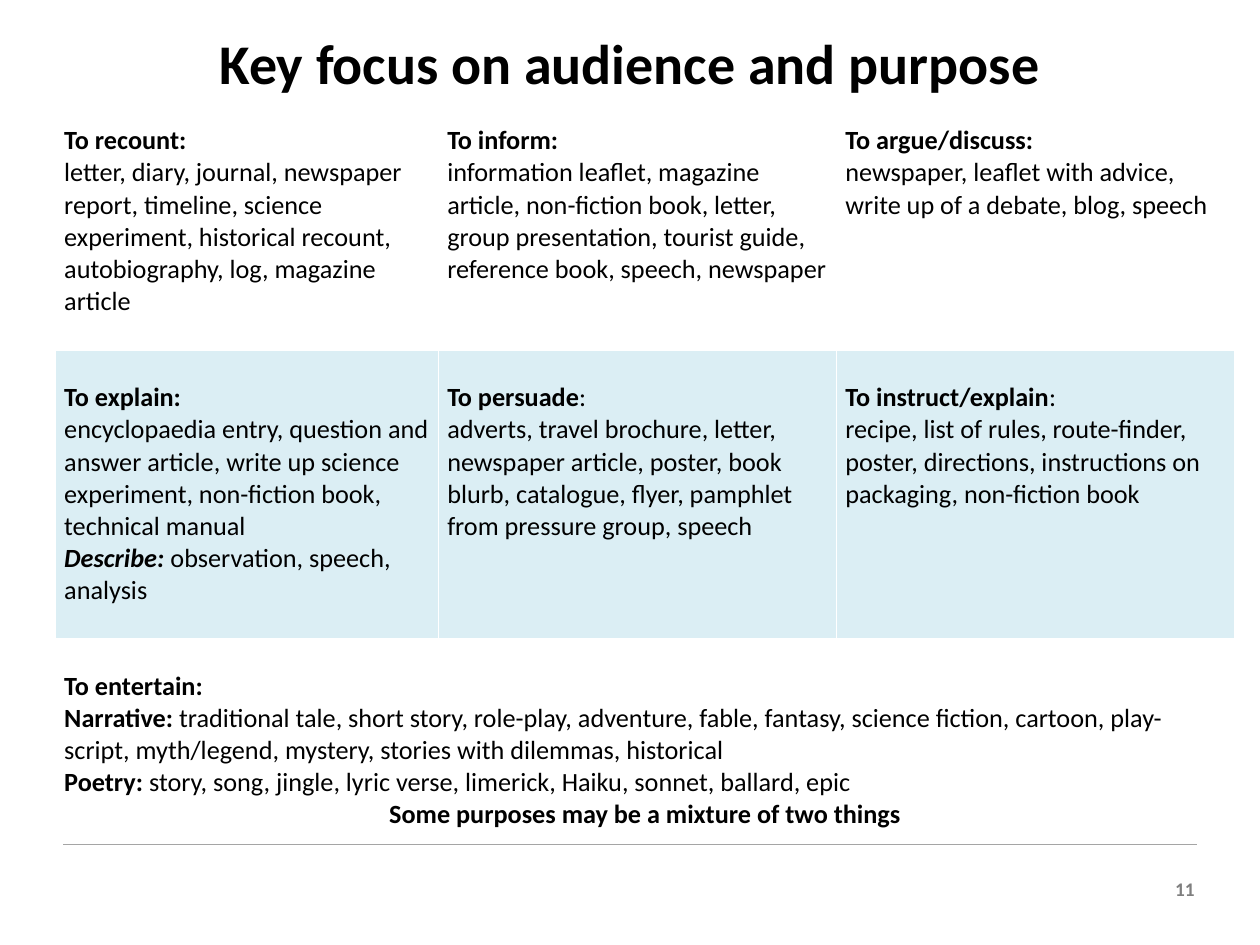
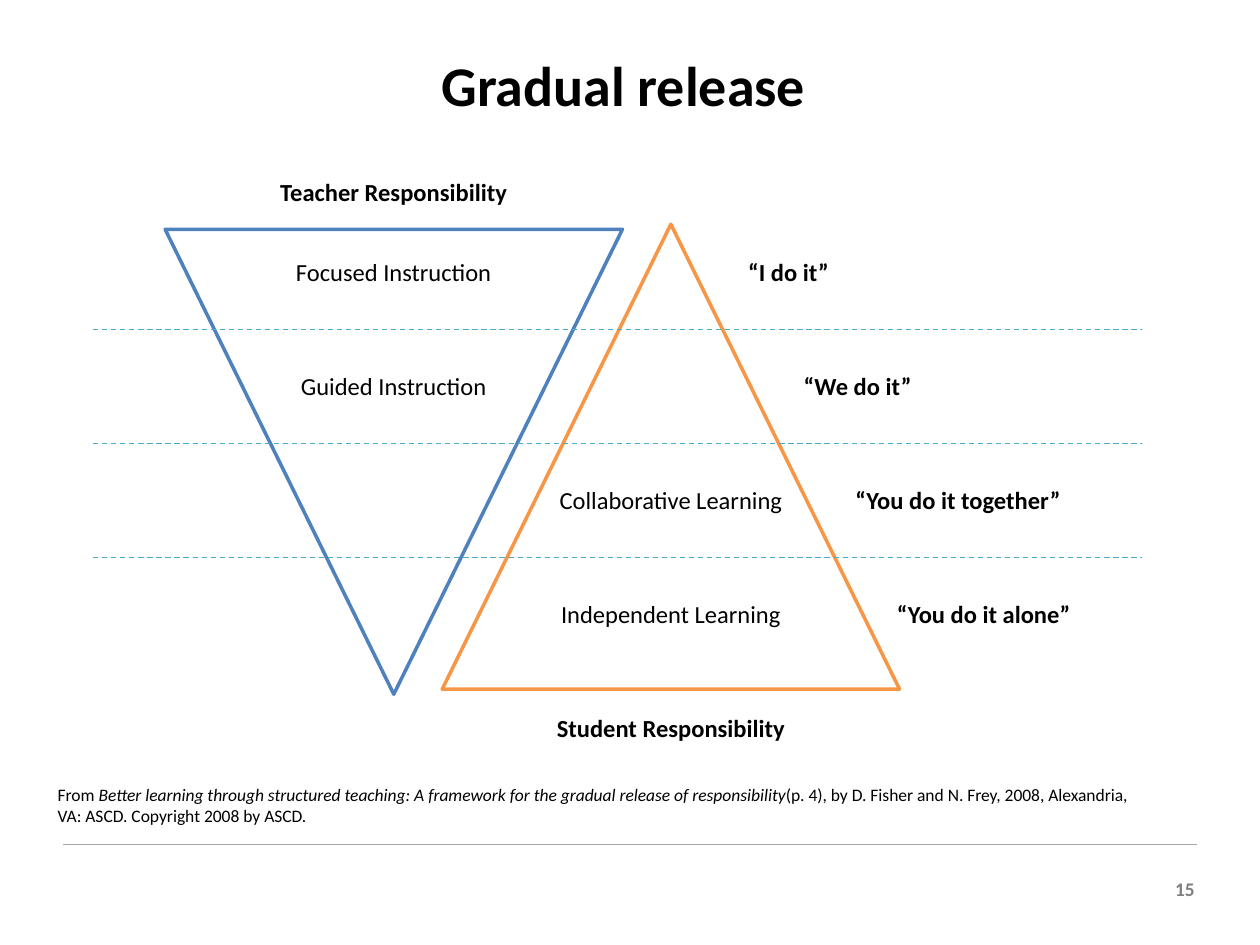
import pptx
import pptx.dml.color
import pptx.enum.dml
import pptx.enum.shapes
import pptx.enum.text
import pptx.oxml
import pptx.oxml.ns
import pptx.util

WIDTH, HEIGHT = 10, 7.5
FONT = "Calibri"
COLORS = {
    "text": "000000", "muted": "7F7F7F", "rule": "A5A5A5", "white": "FFFFFF",
    "band": "DBEEF4", "teacher": "4F81BD", "student": "F79646", "divider": "4BACC6",
}
BOLD = {"bold": True}
BOLD_ITALIC = {"bold": True, "italic": True}
BREAK = ("\n", {})
ALIGN = pptx.enum.text.PP_ALIGN
INCH = pptx.util.Inches

AUDIENCE = {
    "title": "Key focus on audience and purpose", "title_box": (0, 0.18, 10, 0.63), "number": "11",
}
PURPOSES = [
    [
        [
            [("To recount:", BOLD), BREAK,
             ("letter, diary, journal, newspaper report, timeline, science experiment, historical recount,", {})],
            [("autobiography, log, magazine article", {})],
        ],
        [[("To inform:", BOLD), BREAK,
          ("information leaflet, magazine article, non-fiction book, letter, group presentation, "
           "tourist guide, reference book, speech, newspaper", {})]],
        [[("To argue/discuss:", BOLD), BREAK,
          ("newspaper, leaflet with advice, write up of a debate, blog, speech", {})]],
    ],
    [
        [
            [("To explain:", BOLD), BREAK,
             ("encyclopaedia entry, question and answer article, write up science experiment, "
              "non-fiction book, technical manual", {})],
            [("Describe: ", BOLD_ITALIC), ("observation, speech, analysis", {})],
        ],
        [[("To persuade", BOLD), (":", {}), BREAK,
          ("adverts, travel brochure, letter, newspaper article, poster, book blurb, catalogue, "
           "flyer, pamphlet from pressure group, speech", {})]],
        [[("To instruct/explain", BOLD), (":", {}), BREAK,
          ("recipe, list of rules, route-finder, poster, directions, instructions on packaging, "
           "non-fiction book", {})]],
    ],
    [[
        [("To entertain:", BOLD)],
        [("Narrative: ", BOLD),
         ("traditional tale, short story, role-play, adventure, fable, fantasy, science fiction, "
          "cartoon, play-script, myth/legend, mystery, stories with dilemmas, historical", {})],
        [("Poetry: ", BOLD), ("story, song, jingle, lyric verse, limerick, Haiku, sonnet, ballard, epic", {})],
        [("Some purposes may be a mixture of two things", BOLD)],
    ]],
]
TABLE_AT = (0.44, 0.99)
COLUMN_WIDTHS = (3.04, 3.16, 3.16)
ROW_HEIGHTS = (1.79, 2.29, 1.55)
ROW_TOP_MARGINS = (0, 0.25, 0.25)
BANDED_ROW = 1

RELEASE = {"title": "Gradual release", "title_box": (0.45, 0.35, 9, 0.63), "number": "15"}
TEACHER_LEFT, STUDENT_LEFT = 1.37, 3.57
TRIANGLES = [(1.31, 1.82, "teacher", 180), (3.51, 1.78, "student", 0)]
TRIANGLE_SIZE = (3.63, 3.69)
STAGE_TOP, STAGE_PITCH, LABEL_HEIGHT = 1.99, 0.905, 0.34
STAGES = [
    ("Focused Instruction", TEACHER_LEFT, "“I do it”", 5.84),
    ("Guided Instruction", TEACHER_LEFT, "“We do it”", 6.28),
    ("Collaborative Learning", STUDENT_LEFT, "“You do it together”", 6.69),
    ("Independent Learning", STUDENT_LEFT, "“You do it alone”", 7.02),
]
OWNERS = [
    ("Teacher Responsibility", TEACHER_LEFT, 1.36),
    ("Student Responsibility", STUDENT_LEFT, STAGE_TOP + len(STAGES) * STAGE_PITCH),
]
SOURCE = [
    ("From ", {}),
    ("Better learning through structured teaching: A framework for the gradual release of responsibility",
     {"italic": True}),
    ("(p. 4), by D. Fisher and N. Frey, 2008, Alexandria, VA: ASCD. Copyright 2008 by ASCD.", {}),
]


def color(name):
    return pptx.dml.color.RGBColor.from_string(COLORS[name])


def apply(target, values):
    for name, value in values.items():
        setattr(target, name, value)


def write(frame, paragraphs, size, shade="text", align=ALIGN.LEFT):
    for index, pieces in enumerate(paragraphs):
        paragraph = frame.paragraphs[0] if index == 0 else frame.add_paragraph()
        paragraph.alignment = align
        for text, style in pieces:
            if text == "\n":
                paragraph.add_line_break()
                continue
            run = paragraph.add_run()
            run.text = text
            apply(run.font, {"name": FONT, "size": pptx.util.Pt(size), "bold": False, **style})
            run.font.color.rgb = color(shade)


def add_text(slide, box, pieces, size, shade="text", align=ALIGN.LEFT, anchor="TOP"):
    frame = slide.shapes.add_textbox(*map(INCH, box)).text_frame
    apply(frame, {"word_wrap": True, "vertical_anchor": getattr(pptx.enum.text.MSO_ANCHOR, anchor)})
    write(frame, [pieces], size, shade, align)


def add_rule(slide, left, right, top, shade, dashed=False):
    line = slide.shapes.add_connector(
        pptx.enum.shapes.MSO_CONNECTOR.STRAIGHT, INCH(left), INCH(top), INCH(right), INCH(top))
    line.line.color.rgb = color(shade)
    line.line.width = pptx.util.Pt(0.75)
    if dashed:
        line.line.dash_style = pptx.enum.dml.MSO_LINE.DASH
    properties = line._element.spPr
    properties.append(properties.makeelement(pptx.oxml.ns.qn("a:effectLst"), {}))


def add_slide(presentation, content):
    slide = presentation.slides.add_slide(presentation.slide_layouts[6])
    add_rule(slide, 0.05 * WIDTH, 0.95 * WIDTH, 6.7, "rule")
    add_text(slide, (9.2, 6.91, 0.38, 0.29), [(content["number"], BOLD)], 11, "muted", ALIGN.RIGHT)
    add_text(slide, content["title_box"], [(content["title"], BOLD)], 32, align=ALIGN.CENTER, anchor="MIDDLE")
    return slide


def add_borders(cell):
    properties = cell._tc.get_or_add_tcPr()
    for index, side in enumerate(("lnL", "lnR", "lnT", "lnB")):
        properties.insert(index, pptx.oxml.parse_xml(
            f'<a:{side} {pptx.oxml.ns.nsdecls("a")} w="12700"><a:solidFill>'
            f'<a:srgbClr val="{COLORS["white"]}"/></a:solidFill></a:{side}>'))


def add_purposes(slide):
    table = slide.shapes.add_table(
        len(ROW_HEIGHTS), len(COLUMN_WIDTHS), *map(INCH, TABLE_AT),
        INCH(sum(COLUMN_WIDTHS)), INCH(sum(ROW_HEIGHTS))).table
    apply(table, {"first_row": False, "horz_banding": False})
    for column, width in zip(table.columns, COLUMN_WIDTHS):
        column.width = INCH(width)
    for row, height in zip(table.rows, ROW_HEIGHTS):
        row.height = INCH(height)
    table.cell(2, 0).merge(table.cell(2, 2))
    for row_index, row in enumerate(table.rows):
        for cell in row.cells:
            apply(cell, {
                "margin_left": INCH(0.07), "margin_right": INCH(0.07),
                "margin_top": INCH(ROW_TOP_MARGINS[row_index]), "margin_bottom": 0})
            if row_index == BANDED_ROW:
                cell.fill.solid()
                cell.fill.fore_color.rgb = color("band")
            else:
                cell.fill.background()
            add_borders(cell)
        for cell, paragraphs in zip(row.cells, PURPOSES[row_index]):
            write(cell.text_frame, paragraphs, 15)
    table.cell(2, 0).text_frame.paragraphs[-1].alignment = ALIGN.CENTER


def add_release(slide):
    for left, top, shade, rotation in TRIANGLES:
        triangle = slide.shapes.add_shape(
            pptx.enum.shapes.MSO_SHAPE.ISOSCELES_TRIANGLE, *map(INCH, (left, top, *TRIANGLE_SIZE)))
        triangle.rotation = rotation
        triangle.shadow.inherit = False
        triangle.fill.solid()
        triangle.fill.fore_color.rgb = color("white")
        triangle.line.color.rgb = color(shade)
        triangle.line.width = pptx.util.Pt(2)
    for text, left, top in OWNERS:
        add_text(slide, (left, top, 3.51, LABEL_HEIGHT), [(text, BOLD)], 14, align=ALIGN.CENTER)
    for index, (stage, stage_left, quote, quote_left) in enumerate(STAGES):
        top = STAGE_TOP + index * STAGE_PITCH
        add_text(slide, (stage_left, top, 3.51, LABEL_HEIGHT), [(stage, {})], 14, align=ALIGN.CENTER)
        add_text(slide, (quote_left, top, 2.9, LABEL_HEIGHT), [(quote, BOLD)], 14)
        if index:
            add_rule(slide, 0.74, 9.06, top - 0.28, "divider", dashed=True)
    add_text(slide, (0.36, 6.17, 8.73, 0.44), SOURCE, 10)


def main():
    presentation = pptx.Presentation()
    apply(presentation, {"slide_width": INCH(WIDTH), "slide_height": INCH(HEIGHT)})
    add_purposes(add_slide(presentation, AUDIENCE))
    add_release(add_slide(presentation, RELEASE))
    presentation.save("out.pptx")


if __name__ == "__main__":
    main()
